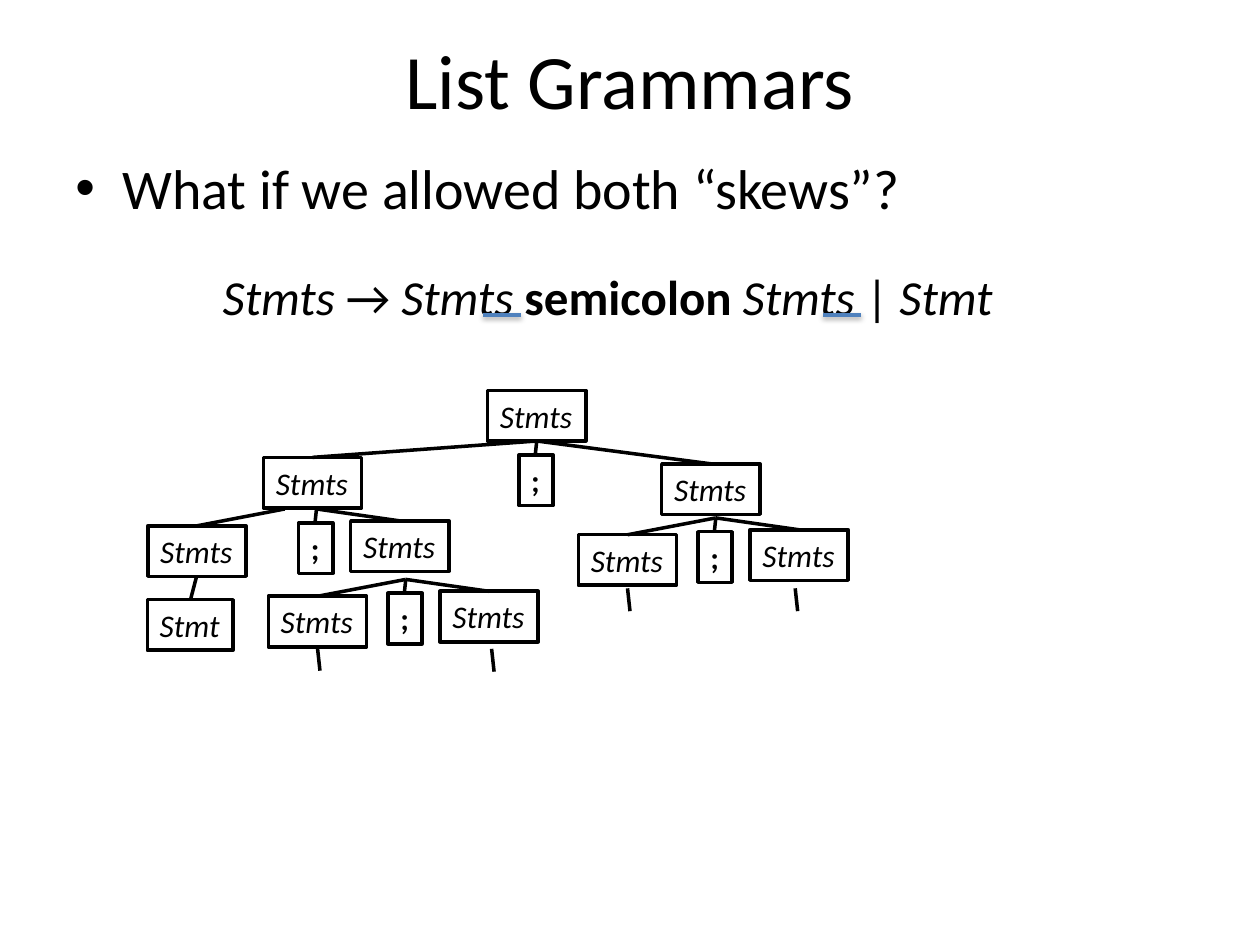
from lxml.etree import SubElement
from pptx import Presentation
from pptx.dml.color import RGBColor as RGB
from pptx.enum.shapes import MSO_CONNECTOR as CONNECTOR
from pptx.enum.text import MSO_ANCHOR as ANCHOR, MSO_AUTO_SIZE as AUTO_SIZE, PP_ALIGN as ALIGN
from pptx.oxml.ns import qn
from pptx.util import Cm, Pt

COLORS = {"ink": "000000", "paper": "FFFFFF", "underline": "4F81BD"}

deck = Presentation()
deck.slide_width, deck.slide_height = Cm(25.4), Cm(19.05)
slide = deck.slides.add_slide(deck.slide_layouts[6])


def add_text(left, top, width, height, size, runs, wrap=True):
    """Text box with one paragraph; each run is (text, style)."""
    box = slide.shapes.add_textbox(Cm(left), Cm(top), Cm(width), Cm(height))
    box.text_frame.word_wrap = wrap
    for text, style in runs:
        run = box.text_frame.paragraphs[0].add_run()
        run.text = text
        run.font.name, run.font.size = "Calibri", Pt(size)
        run.font.italic, run.font.bold = style == "italic", style == "bold"
        run.font.color.rgb = RGB.from_string(COLORS["ink"])
    return box


def add_line(x1, y1, x2, y2, color="ink"):
    """Straight 2 pt line; returns its effect list."""
    line = slide.shapes.add_connector(CONNECTOR.STRAIGHT, Cm(x1), Cm(y1), Cm(x2), Cm(y2))
    line.line.width = Pt(2)
    line.line.color.rgb = RGB.from_string(COLORS[color])
    return SubElement(line._element.spPr, qn("a:effectLst"))


# Title
title = add_text(1.27, 0, 22.86, 3.18, 44, [("List Grammars", "plain")])
title.text_frame.vertical_anchor = ANCHOR.MIDDLE
title.text_frame.paragraphs[0].alignment = ALIGN.CENTER

# Bulleted question
question = add_text(1.27, 2.97, 22.86, 12.57, 32, [("What if we allowed both “skews”?", "plain")])
question_line = question.text_frame.paragraphs[0]
question_line.space_before = Pt(6.4)
bullet_props = question_line._p.get_or_add_pPr()
bullet_props.set("marL", str(Cm(0.95)))
bullet_props.set("indent", str(-Cm(0.95)))
SubElement(bullet_props, qn("a:buFont"), typeface="Arial")
SubElement(bullet_props, qn("a:buChar"), char="•")

# Grammar rule
rule = add_text(4.24, 4.65, 20.75, 2.06, 28, [
    ("Stmts", "italic"), (" → ", "plain"), ("Stmts ", "italic"), ("semicolon ", "bold"),
    ("Stmts ", "italic"), ("| ", "plain"), ("Stmt", "italic")])
rule.text_frame.paragraphs[0].line_spacing = 1.5

# Shadowed underlines beneath the plural endings
for underline_x in (9.73, 16.59):
    effects = add_line(underline_x, 6.35, underline_x + 0.77, 6.35, "underline")
    shadow = SubElement(effects, qn("a:outerShdw"), blurRad=str(Pt(3.1)), dist=str(Pt(1.6)),
                        dir="5400000", rotWithShape="0")
    shade = SubElement(shadow, qn("a:srgbClr"), val=COLORS["ink"])
    SubElement(shade, qn("a:alpha"), val="38000")

# Parse tree: every branch point has a left list, a semicolon and a right list
NODE_W, SEMI_W, NODE_H = 1.98, 0.69, 1.02
nodes = [("Stmts", 9.83, 7.87, NODE_W), ("Stmt", 2.97, 12.09, 1.73)]
edges = [(3.96, 11.63, 3.84, 12.09)]
# apex x, apex y, start of left edge, offset of left box, offset of right box
branches = [
    (10.82, 8.89, 10.82, (-5.51, 0.33), (2.52, 0.46)),
    (6.38, 10.26, 5.74, (-3.4, 0.34), (0.69, 0.24)),
    (14.43, 10.44, 14.43, (-2.77, 0.34), (0.69, 0.24)),
    (8.18, 11.68, 8.18, (-2.77, 0.34), (0.69, 0.24)),
]
for apex_x, apex_y, left_start, left_offset, right_offset in branches:
    for start_x, (dx, dy) in ((left_start, left_offset), (apex_x, right_offset)):
        nodes.append(("Stmts", apex_x + dx, apex_y + dy, NODE_W))
        edges.append((start_x, apex_y, apex_x + dx + NODE_W / 2, apex_y + dy))
    nodes.append((";", apex_x - 0.36, apex_y + 0.28, SEMI_W))
    edges.append((apex_x, apex_y, apex_x - 0.03, apex_y + 0.28))

# Stubs for subtrees left open
for stub_x, stub_y in ((6.4, 13.06), (9.91, 13.08), (12.65, 11.86), (16.03, 11.86)):
    edges.append((stub_x, stub_y, stub_x + 0.05, stub_y + 0.46))

for symbol, left, top, width in nodes:
    style = "bold" if symbol == ";" else "italic"
    node = add_text(left, top, width, NODE_H, 18, [(symbol, style)], wrap=False)
    node.text_frame.auto_size = AUTO_SIZE.SHAPE_TO_FIT_TEXT
    node.fill.solid()
    node.fill.fore_color.rgb = RGB.from_string(COLORS["paper"])
    node.line.color.rgb = RGB.from_string(COLORS["ink"])
    node.line.width = Pt(2)
for edge in edges:
    add_line(*edge)

deck.save("out.pptx")
